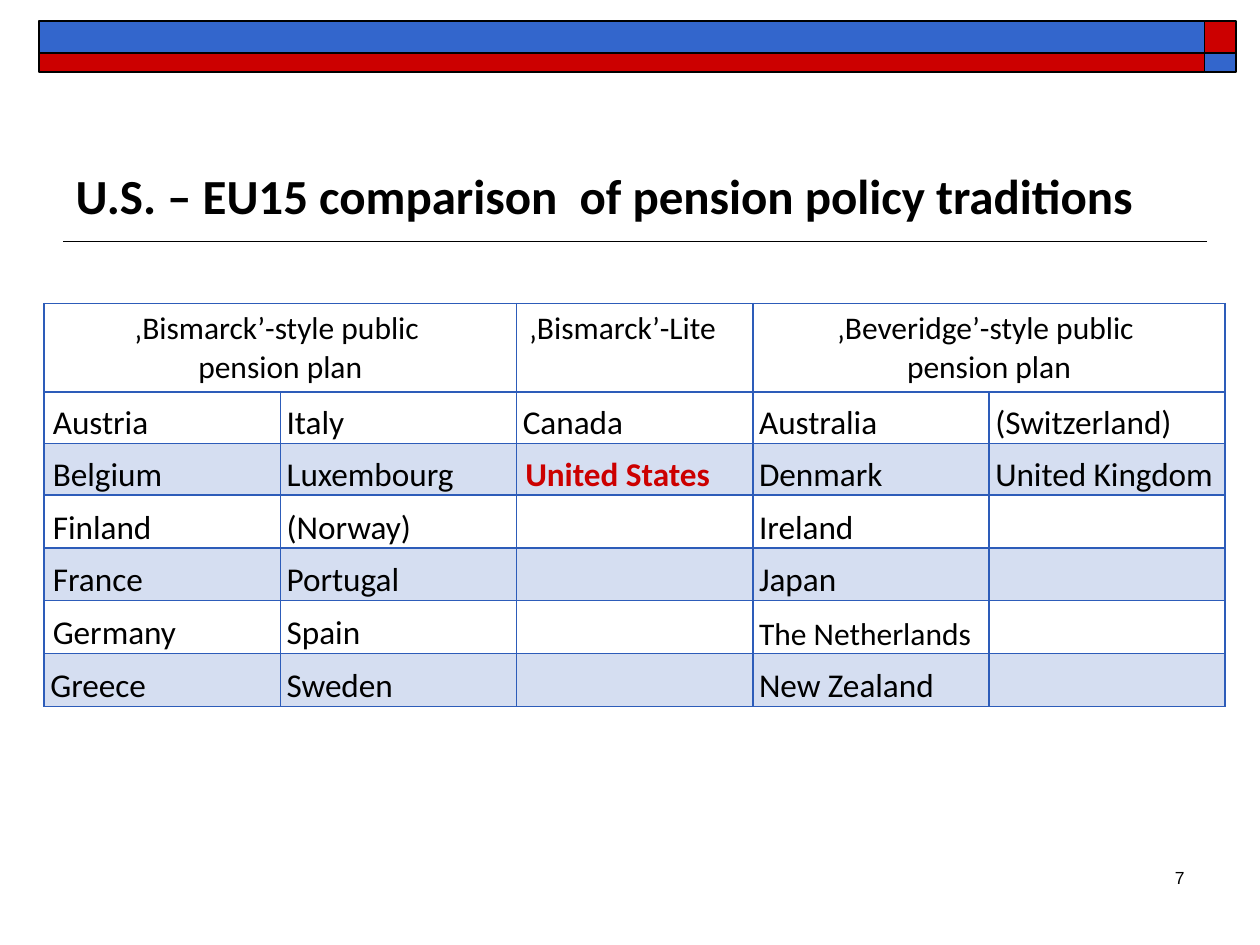
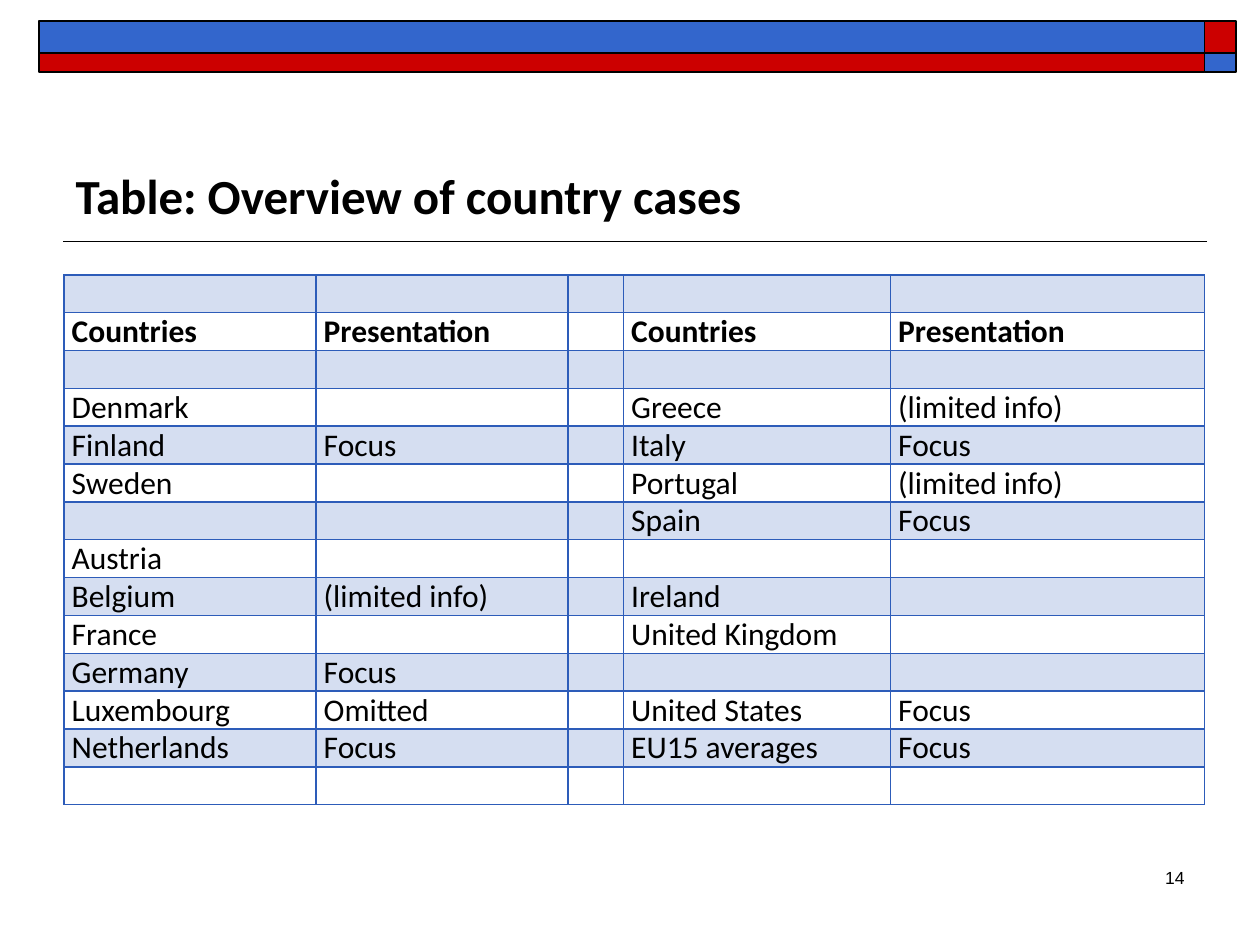
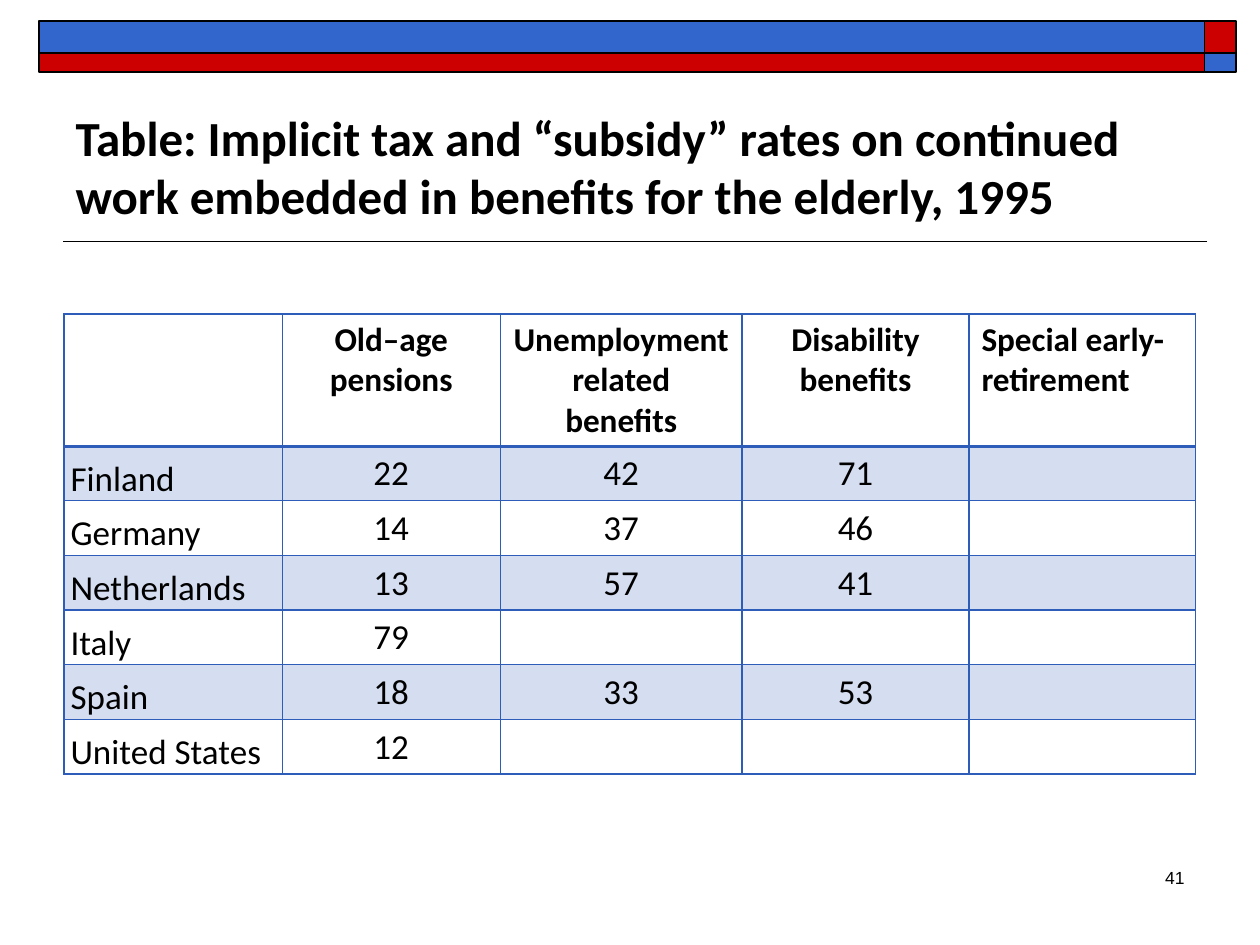
"""Build three pension policy table slides with a shared banner, title style and page number."""
from dataclasses import dataclass

from lxml.etree import SubElement
from pptx import Presentation
from pptx.dml.color import RGBColor as RGB
from pptx.enum.shapes import MSO_CONNECTOR as CONNECTOR, MSO_SHAPE as SHAPE
from pptx.enum.text import MSO_ANCHOR as ANCHOR, MSO_AUTO_SIZE as AUTO, PP_ALIGN as ALIGN
from pptx.oxml.ns import qn
from pptx.util import Pt


@dataclass(frozen=True)
class Theme:
    ink: RGB = RGB(0, 0, 0)
    blue: RGB = RGB(0x33, 0x66, 0xCC)
    red: RGB = RGB(0xCC, 0, 0)
    grid: RGB = RGB(0x2D, 0x5C, 0xB9)
    tint_alpha: str = "20000"
    face: str = "Calibri"
    page_face: str = "Arial"
    title_size: int = 28
    large_size: int = 20
    body_size: int = 19
    small_size: int = 18
    page_size: int = 10


theme = Theme()
BASE = {"name": theme.face, "size": theme.body_size, "bold": False, "color": theme.ink,
        "align": ALIGN.LEFT, "anchor": ANCHOR.BOTTOM, "pad_x": 3.6, "pad_y": 0}
PADDED = BASE | {"anchor": ANCHOR.TOP, "pad_x": 7.2, "pad_y": 3.6}
CENTERED = PADDED | {"align": ALIGN.CENTER}
TITLE = PADDED | {"size": theme.title_size, "bold": True, "anchor": ANCHOR.BOTTOM}
PAGE = PADDED | {"name": theme.page_face, "size": theme.page_size, "align": ALIGN.RIGHT}
INDENTED = BASE | {"pad_x": 5}
OVERVIEW = BASE | {"size": theme.small_size, "anchor": ANCHOR.MIDDLE, "pad_x": 4.3}
TRADITION = CENTERED | {"size": theme.small_size}
BENEFIT = CENTERED | {"bold": True}
RATE = CENTERED | {"size": theme.large_size}


def write(frame, text, style):
    """Fill a text frame and format its paragraphs."""
    frame.text = text
    frame.word_wrap = True
    for paragraph in frame.paragraphs:
        paragraph.alignment = style["align"]
        for run in paragraph.runs:
            for key, value in {"name": style["name"], "size": Pt(style["size"]),
                               "bold": style["bold"]}.items():
                setattr(run.font, key, value)
            run.font.color.rgb = style["color"]


def place(box, style):
    """Set the anchor and insets of a cell or text frame."""
    for key, value in {"vertical_anchor": style["anchor"],
                       "margin_left": Pt(style["pad_x"]), "margin_right": Pt(style["pad_x"]),
                       "margin_top": Pt(style["pad_y"]), "margin_bottom": Pt(style["pad_y"])}.items():
        setattr(box, key, value)


BANNER = [
    (688.3, 12.2, 18, 18, theme.red),
    (22.3, 12.2, 666, 18, theme.blue),
    (22.3, 30.2, 666, 10.8, theme.red),
    (688.3, 30.2, 18, 10.8, theme.blue),
]

PAGES = [
    {
        "title": "U.S. – EU15 comparison  of pension policy traditions", "page": "7",
        "left": 25.2, "top": 173.5, "columns": [135] * 5,
        "heights": [50.4] + [29.5] * 2 + [30.2] * 4,
        "head": TRADITION, "lead": INDENTED, "body": BASE,
        "special": {(0, 2): TRADITION | {"align": ALIGN.LEFT},
                    (2, 2): INDENTED | {"bold": True, "color": theme.red},
                    (5, 3): BASE | {"size": theme.small_size}, (6, 0): BASE},
        "merges": [(0, 1), (3, 4)], "first_tint": 2, "head_rule": 1,
        "rows": [
            ["‚Bismarck’-style public \vpension plan", "", "‚Bismarck’-Lite",
             "‚Beveridge’-style public \vpension plan", ""],
            ["Austria", "Italy", "Canada", "Australia", "(Switzerland)"],
            ["Belgium", "Luxembourg", "United States", "Denmark", "United Kingdom"],
            ["Finland", "(Norway)", "", "Ireland", ""],
            ["France", "Portugal", "", "Japan", ""],
            ["Germany", "Spain", "", "The Netherlands", ""],
            ["Greece", "Sweden", "", "New Zealand", ""],
        ],
    },
    {
        "title": "Table: Overview of country cases", "page": "14",
        "left": 36.7, "top": 157, "columns": [144, 144, 31.7, 152.6, 179.3],
        "heights": [21.6] * 14,
        "head": OVERVIEW, "lead": OVERVIEW, "body": OVERVIEW,
        "special": {(1, column): OVERVIEW | {"bold": True} for column in range(5)},
        "merges": [], "first_tint": 0, "head_rule": 1,
        "rows": [
            [""] * 5,
            ["Countries", "Presentation", "", "Countries", "Presentation"],
            [""] * 5,
            ["Denmark", "", "", "Greece", "(limited info)"],
            ["Finland", "Focus", "", "Italy", "Focus"],
            ["Sweden", "", "", "Portugal", "(limited info)"],
            ["", "", "", "Spain", "Focus"],
            ["Austria", "", "", "", ""],
            ["Belgium", "(limited info)", "", "Ireland", ""],
            ["France", "", "", "United Kingdom", ""],
            ["Germany", "Focus", "", "", ""],
            ["Luxembourg", "Omitted", "", "United States", "Focus"],
            ["Netherlands", "Focus", "", "EU15 averages", "Focus"],
            [""] * 5,
        ],
    },
    {
        "title": "Table: Implicit tax and “subsidy” rates on continued work embedded in "
                 "benefits for the elderly, 1995", "page": "41",
        "left": 36.7, "top": 179.3, "columns": [124.6, 124.6, 138.2, 129.6, 129.6],
        "heights": [75.6] + [31] * 6,
        "head": BENEFIT, "lead": BASE | {"size": theme.large_size}, "body": RATE,
        "special": {(0, 4): BENEFIT | {"align": ALIGN.LEFT}},
        "merges": [], "first_tint": 1, "head_rule": 2,
        "rows": [
            ["", "Old–age\npensions", "Unemployment related benefits", "Disability benefits",
             "Special early-retirement"],
            ["Finland", "22", "42", "71", ""],
            ["Germany", "14", "37", "46", ""],
            ["Netherlands", "13", "57", "41", ""],
            ["Italy", "79", "", "", ""],
            ["Spain", "18", "33", "53", ""],
            ["United States", "12", "", "", ""],
        ],
    },
]

deck = Presentation()
deck.slide_width, deck.slide_height = Pt(720), Pt(540)

for page in PAGES:
    slide = deck.slides.add_slide(deck.slide_layouts[5])
    shapes = slide.shapes

    rule = shapes.add_connector(CONNECTOR.STRAIGHT, Pt(689.8), Pt(138), Pt(36), Pt(138))
    rule.line.color.rgb = theme.ink
    rule.line.width = Pt(1)
    SubElement(rule.element.spPr, qn("a:effectLst"))
    for left, top, width, height, color in BANNER:
        band = shapes.add_shape(SHAPE.RECTANGLE, Pt(left), Pt(top), Pt(width), Pt(height))
        band.shadow.inherit = False
        band.fill.solid()
        band.fill.fore_color.rgb = color
        band.line.color.rgb = theme.ink
        band.line.width = Pt(1)

    number = shapes.add_textbox(Pt(534), Pt(492), Pt(150), Pt(36)).text_frame
    write(number, page["page"], PAGE)
    place(number, PAGE)

    heading = shapes.title
    for key, value in {"left": 36, "top": 42, "width": 648, "height": 90}.items():
        setattr(heading, key, Pt(value))
    write(heading.text_frame, page["title"], TITLE)
    place(heading.text_frame, TITLE)
    heading.text_frame.auto_size = AUTO.NONE

    rows, columns, heights = page["rows"], page["columns"], page["heights"]
    table = shapes.add_table(len(rows), len(columns), Pt(page["left"]), Pt(page["top"]),
                             Pt(sum(columns)), Pt(sum(heights))).table
    table.first_row = table.horz_banding = False
    for column, width in zip(table.columns, columns):
        column.width = Pt(width)
    for row, height in zip(table.rows, heights):
        row.height = Pt(height)
    for first, last in page["merges"]:
        table.cell(0, first).merge(table.cell(0, last))

    for r, entries in enumerate(rows):
        for c, entry in enumerate(entries):
            cell = table.cell(r, c)
            usual = page["head"] if r == 0 else page["lead"] if c == 0 else page["body"]
            style = page["special"].get((r, c), usual)
            write(cell.text_frame, entry, style)
            place(cell, style)
            properties = cell._tc.get_or_add_tcPr()
            weights = {"L": 1, "R": 1, "T": page["head_rule"] if r == 1 else 1,
                       "B": page["head_rule"] if r == 0 else 1}
            for side, weight in weights.items():
                edge = SubElement(properties, qn(f"a:ln{side}"), w=str(Pt(weight)))
                SubElement(SubElement(edge, qn("a:solidFill")), qn("a:srgbClr"), val=str(theme.grid))
            if r >= page["first_tint"] and (r - page["first_tint"]) % 2 == 0:
                cell.fill.solid()
                cell.fill.fore_color.rgb = theme.grid
                tint = properties.find(f"{qn('a:solidFill')}/{qn('a:srgbClr')}")
                SubElement(tint, qn("a:alpha"), val=theme.tint_alpha)
            else:
                cell.fill.background()

deck.save("out.pptx")
